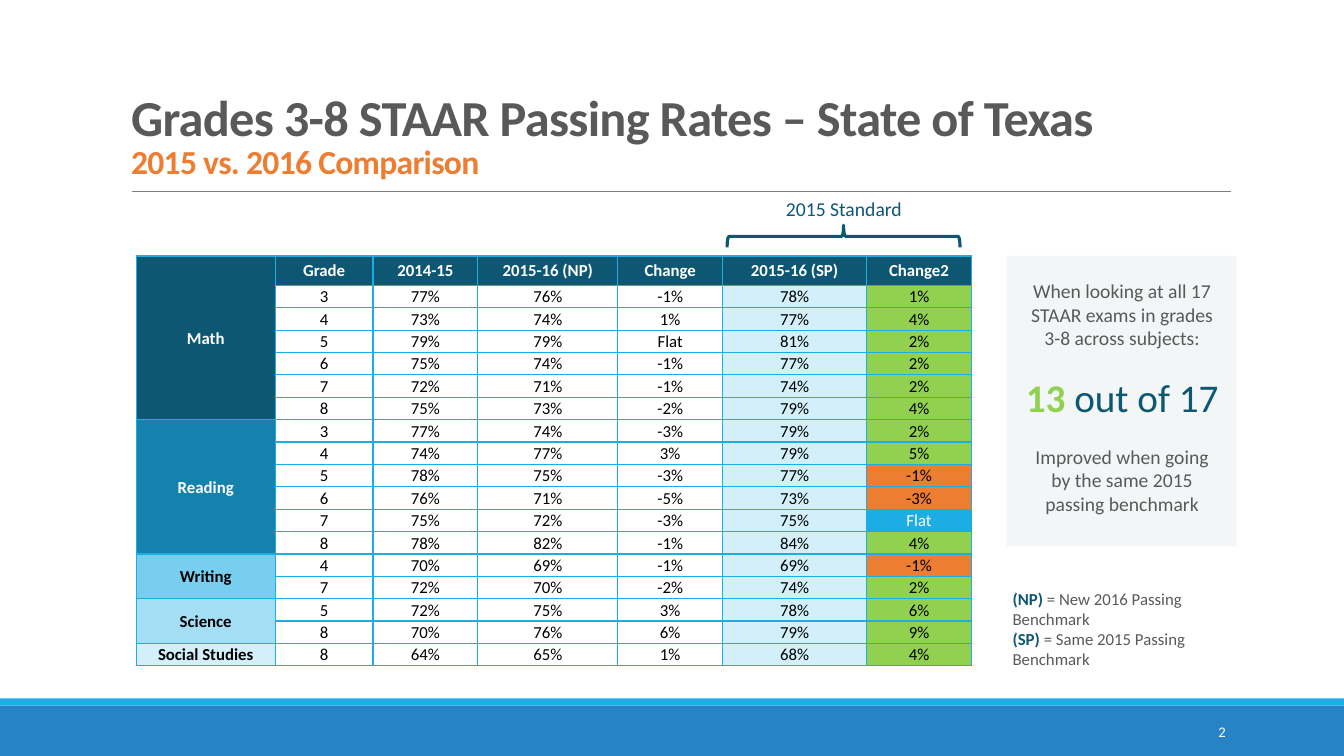
from lxml.etree import SubElement as Sub
from pptx import Presentation
from pptx.dml.color import RGBColor as RGB
from pptx.enum.shapes import MSO_CONNECTOR as Conn, MSO_SHAPE as Shape
from pptx.enum.text import MSO_ANCHOR as Anchor, MSO_AUTO_SIZE as Auto, PP_ALIGN as Align
from pptx.oxml import parse_xml
from pptx.oxml.ns import nsdecls, qn
from pptx.util import Cm, Pt

HUES = {
    "white": "FFFFFF", "black": "000000", "gray": "595959", "rule": "808080",
    "navy": "0E5772", "teal": "1482AC", "sky": "1CADE4", "blue": "2683C6",
    "light": "77CEEF", "pale": "A4DEF4", "ice": "D2EFFA",
    "green": "92D050", "orange": "ED7D31",
}

HEAD = ["Grade", "2014-15", "2015-16 (NP)", "Change", "2015-16 (SP)", "Change2"]
WIDTHS = [3.51, 2.46, 2.64, 3.53, 2.64, 3.63, 2.64]
SCORES = """
3 77% 76% -1% 78% 1%
4 73% 74% 1% 77% 4%
5 79% 79% Flat 81% 2%
6 75% 74% -1% 77% 2%
7 72% 71% -1% 74% 2%
8 75% 73% -2% 79% 4%
3 77% 74% -3% 79% 2%
4 74% 77% 3% 79% 5%
5 78% 75% -3% 77% -1%
6 76% 71% -5% 73% -3%
7 75% 72% -3% 75% Flat
8 78% 82% -1% 84% 4%
4 70% 69% -1% 69% -1%
7 72% 70% -2% 74% 2%
5 72% 75% 3% 78% 6%
8 70% 76% 6% 79% 9%
8 64% 65% 1% 68% 4%
"""
# Subject, rows covered, fill, text colour
GROUPS = [
    ("Math", 7, "navy", "white"),
    ("Reading", 6, "teal", "white"),
    ("Writing", 2, "light", "black"),
    ("Science", 2, "pale", "black"),
    ("Social Studies", 1, "ice", "black"),
]


def hue(name):
    return RGB.from_string(HUES[name])


class Deck:
    face = "Calibri"

    def __init__(self):
        self.prs = Presentation()
        self.prs.slide_width, self.prs.slide_height = Cm(33.87), Cm(19.05)
        self.slide = self.prs.slides.add_slide(self.prs.slide_layouts[5])
        self.shapes = self.slide.shapes

    def style(self, run, size, color, bold=False):
        font = run.font
        font.name, font.size, font.bold = self.face, Pt(size), bold
        font.color.rgb = hue(color)

    def place(self, shape, spot):
        shape.left, shape.top, shape.width, shape.height = map(Cm, spot)

    def title(self, spot, lines):
        """Each line is (text, size, colour)."""
        shape = self.shapes.title
        self.place(shape, spot)
        frame = shape.text_frame
        frame.text = "\v".join(line[0] for line in lines)
        frame.auto_size, frame.vertical_anchor = Auto.NONE, Anchor.BOTTOM
        para = frame.paragraphs[0]
        para.alignment, para.line_spacing = Align.LEFT, 0.85
        for run, (_, size, color) in zip(para.runs, lines):
            self.style(run, size, color, True)
            run.font._element.set("spc", "-50")

    def rect(self, spot, color, alpha=None):
        shape = self.shapes.add_shape(Shape.RECTANGLE, *map(Cm, spot))
        shape.shadow.inherit = False
        shape.fill.solid()
        shape.fill.fore_color.rgb = hue(color)
        shape.line.fill.background()
        if alpha:
            tint = shape._element.spPr.find(".//" + qn("a:srgbClr"))
            Sub(tint, qn("a:alpha"), val=str(alpha * 1000))

    def rule(self, ends, color, width):
        line = self.shapes.add_connector(Conn.STRAIGHT, *map(Cm, ends))
        line.line.color.rgb, line.line.width = hue(color), Pt(width)
        Sub(line._element.spPr, qn("a:effectLst"))

    def brace(self, spot, color, width):
        shape = self.shapes.add_shape(Shape.RIGHT_BRACE, *map(Cm, spot))
        shape.rotation = 270
        shape.shadow.inherit = False
        shape.fill.background()
        shape.line.color.rgb, shape.line.width = hue(color), Pt(width)

    def text(self, spot, paras, align=Align.LEFT, gap=0, anchor=Anchor.TOP):
        """Each paragraph is a list of runs (text, size, colour, bold)."""
        frame = self.shapes.add_textbox(*map(Cm, spot)).text_frame
        frame.word_wrap, frame.vertical_anchor = True, anchor
        for i, runs in enumerate(paras):
            para = frame.add_paragraph() if i else frame.paragraphs[0]
            para.alignment = align
            if i and gap:
                para.space_before = Pt(gap)
            for words, *look in runs:
                run = para.add_run()
                run.text = words
                self.style(run, *look)

    def cell(self, cell, words, fill, color, bold):
        cell.text = words
        cell.vertical_anchor = Anchor.MIDDLE
        cell.margin_left = cell.margin_right = cell.margin_top = Cm(0.03)
        cell.margin_bottom = 0
        para = cell.text_frame.paragraphs[0]
        para.alignment = Align.CENTER
        para.font.size = Pt(12)
        for run in para.runs:
            self.style(run, 12, color, bold)
        if fill:
            cell.fill.solid()
            cell.fill.fore_color.rgb = hue(fill)
        else:
            cell.fill.background()
        props = cell._tc.get_or_add_tcPr()
        for i, side in enumerate("LRTB"):
            props.insert(i, parse_xml(
                f'<a:ln{side} {nsdecls("a")} w="12700"><a:solidFill>'
                f'<a:srgbClr val="{HUES["sky"]}"/></a:solidFill></a:ln{side}>'))

    def table(self, left, top, head, rows, groups, widths, tall, step):
        high = tall + step * len(rows)
        table = self.shapes.add_table(
            len(rows) + 1, len(widths), Cm(left), Cm(top),
            Cm(sum(widths)), Cm(high)).table
        table.first_row = table.horz_banding = False
        for col, width in zip(table.columns, widths):
            col.width = Cm(width)
        for i, row in enumerate(table.rows):
            row.height = Cm(step if i else tall)
        # Header and scores
        for c, words in enumerate(head, 1):
            self.cell(table.cell(0, c), words, "navy", "white", True)
        for r, row in enumerate(rows, 1):
            last = row[-1]
            mark = "sky" if last == "Flat" else "orange" if last[0] == "-" else "green"
            fills = [None] * 4 + ["ice", mark]
            for c, (words, fill) in enumerate(zip(row, fills), 1):
                color = "white" if fill == "sky" else "black"
                self.cell(table.cell(r, c), words, fill, color, False)
        # Subject column
        start = 0
        for name, span, fill, color in groups:
            for r in range(start, start + span):
                self.cell(table.cell(r, 0), name if r == start else "", fill, color, True)
            if span > 1:
                table.cell(start, 0).merge(table.cell(start + span - 1, 0))
            start += span


def main():
    deck = Deck()

    # Footer bands, title rule and page number
    deck.rect((0, 17.78, 33.87, 1.27), "blue")
    deck.rect((0, 17.6, 33.87, 0.18), "sky")
    deck.rule((3.33, 4.83, 31.01, 4.83), "rule", 0.5)
    deck.text((27.51, 17.93, 3.63, 1.02), [[("2", 10.5, "white")]],
              Align.RIGHT, anchor=Anchor.MIDDLE)

    # Title
    deck.title((3.05, 0.66, 27.94, 4.04), [
        ("Grades 3-8 STAAR Passing Rates – State of Texas", 36, "gray"),
        ("2015 vs. 2016 Comparison", 24, "orange"),
    ])

    # Passing rates
    rows = [line.split() for line in SCORES.strip().splitlines()]
    deck.table(3.43, 6.45, HEAD, rows, GROUPS, WIDTHS, 0.74, 0.565)

    # Side panel
    deck.rect((25.37, 6.45, 5.79, 7.32), "navy", 5)
    deck.text((25.55, 6.91, 5.46, 7.44), [
        [("When looking at all 17 STAAR exams in grades 3-8 across subjects:", 14, "gray")],
        [("13 ", 28, "green", True), ("out of 17", 28, "navy")],
        [("Improved when going by the same 2015 passing benchmark", 14, "gray")],
    ], Align.CENTER, gap=17)

    # Legend
    deck.text((25.27, 14.71, 5.87, 2.31), [
        [(key, 12, "navy", True), (words, 12, "gray")] for key, words in (
            ("(NP) ", "= New 2016 Passing Benchmark"),
            ("(SP) ", "= Same 2015 Passing Benchmark"))
    ])

    # Brace over the last two columns
    deck.brace((20.98, 3.02, 0.56, 5.87), "navy", 2.25)
    deck.text((18.54, 4.83, 5.46, 0.86), [[("2015 Standard", 14, "navy")]], Align.CENTER)

    deck.prs.save("out.pptx")


if __name__ == "__main__":
    main()
